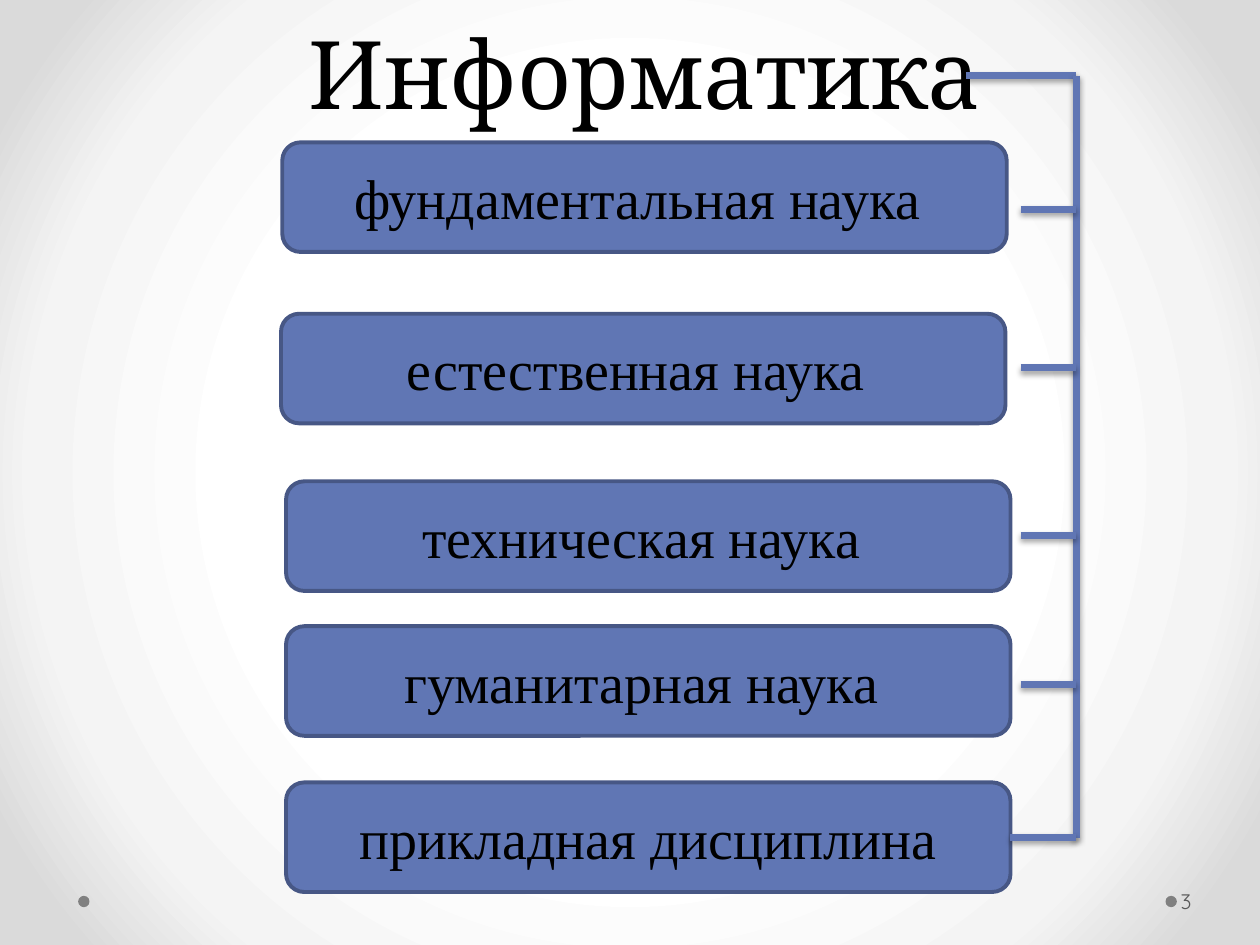
from lxml import etree
from pptx import Presentation
from pptx.dml.color import RGBColor
from pptx.enum import shapes, text
from pptx.oxml.ns import qn
from pptx.util import Inches, Pt

COLORS = {"blue": "6076B4", "edge": "475785", "dot": "808080",
          "number": "595959", "black": "000000"}
NS = 'xmlns:a="http://schemas.openxmlformats.org/drawingml/2006/main"'
SHADOW = (f'<a:effectLst {NS}><a:outerShdw blurRad="40000" dist="23000" dir="5400000" '
          'rotWithShape="0"><a:srgbClr val="000000"><a:alpha val="35000"/></a:srgbClr>'
          '</a:outerShdw></a:effectLst>')
STOPS = [(50, "FFFFFF"), (76, "F4F4F4"), (92, "DADADA")]


def write(sp, words, anchor, align, font, size, color):
    """Fill a shape with one formatted paragraph and return the paragraph."""
    tf = sp.text_frame
    tf.word_wrap = True
    tf.vertical_anchor = anchor
    p = tf.paragraphs[0]
    p.alignment = align
    r = p.add_run()
    r.text = words
    for name, value in {"name": font, "size": Pt(size)}.items():
        setattr(r.font, name, value)
    r.font.color.rgb = RGBColor.from_string(COLORS[color])
    return p


def add_line(x1, y1, x2, y2):
    c = s.shapes.add_connector(shapes.MSO_CONNECTOR.STRAIGHT,
                               Inches(x1), Inches(y1), Inches(x2), Inches(y2))
    c.line.color.rgb = RGBColor.from_string(COLORS["blue"])
    c.line.width = Pt(4)
    c.element.spPr.append(etree.fromstring(SHADOW))
    return c


prs = Presentation()
prs.slide_width, prs.slide_height = Inches(10), Inches(7.5)
s = prs.slides.add_slide(prs.slide_layouts[6])

# Radial background
s.background.fill.gradient()
old = s.element.find(".//" + qn("a:gradFill"))
stops = "".join(f'<a:gs pos="{pos * 1000}"><a:srgbClr val="{color}"/></a:gs>'
                for pos, color in STOPS)
old.getparent().replace(old, etree.fromstring(
    f'<a:gradFill {NS} rotWithShape="1"><a:gsLst>{stops}</a:gsLst><a:path path="circle">'
    '<a:fillToRect l="50000" t="50000" r="50000" b="50000"/></a:path></a:gradFill>'))

# Footer dots
for x in (9.25, 0.62):
    dot = s.shapes.add_shape(shapes.MSO_SHAPE.OVAL, Inches(x), Inches(7.11),
                             Inches(0.09), Inches(0.09))
    dot.shadow.inherit = False
    dot.fill.solid()
    dot.fill.fore_color.rgb = RGBColor.from_string(COLORS["dot"])
    dot.line.fill.background()

# Title and slide number
title = s.shapes.add_textbox(Inches(0.62), Inches(-0.68), Inches(9), Inches(1.75))
p = write(title, "Информатика", text.MSO_ANCHOR.BOTTOM, text.PP_ALIGN.CENTER,
          "Cambria", 54, "black")
p.line_spacing = Pt(58)
number = s.shapes.add_textbox(Inches(9.34), Inches(6.95), Inches(0.61), Inches(0.4))
write(number, "3", text.MSO_ANCHOR.MIDDLE, text.PP_ALIGN.LEFT, "Quicksand", 12, "number")
number.text_frame.margin_left = Inches(0.03)
number.text_frame.margin_right = Inches(0.05)

# Trunk of the bracket
TRUNK = 8.54
add_line(7.67, 0.6, TRUNK, 0.6)
add_line(TRUNK, 0.6, TRUNK, 6.65)

# Sciences: left, top, branch height, label
SCIENCES = [
    (2.24, 1.13, 1.66, "фундаментальная наука "),
    (2.23, 2.49, 2.92, "естественная наука "),
    (2.27, 3.82, 4.25, "техническая наука "),
    (2.27, 4.97, 5.43, "гуманитарная наука "),
    (2.27, 6.21, 6.64, "прикладная дисциплина"),
]
for x, y, branch_y, label in SCIENCES:
    box = s.shapes.add_shape(shapes.MSO_SHAPE.ROUNDED_RECTANGLE, Inches(x), Inches(y),
                             Inches(5.75), Inches(0.87))
    box.shadow.inherit = False
    box.fill.solid()
    box.fill.fore_color.rgb = RGBColor.from_string(COLORS["blue"])
    box.line.color.rgb = RGBColor.from_string(COLORS["edge"])
    box.line.width = Pt(2.25)
    p = write(box, label, text.MSO_ANCHOR.MIDDLE, text.PP_ALIGN.CENTER,
              "Times New Roman", 32, "black")
    p.space_after = Pt(6)
    branch = add_line(8.1, branch_y, TRUNK, branch_y)

# Only the last branch reaches its box
branch.begin_connect(box, 3)
branch.end_y = branch.begin_y

prs.save("out.pptx")
